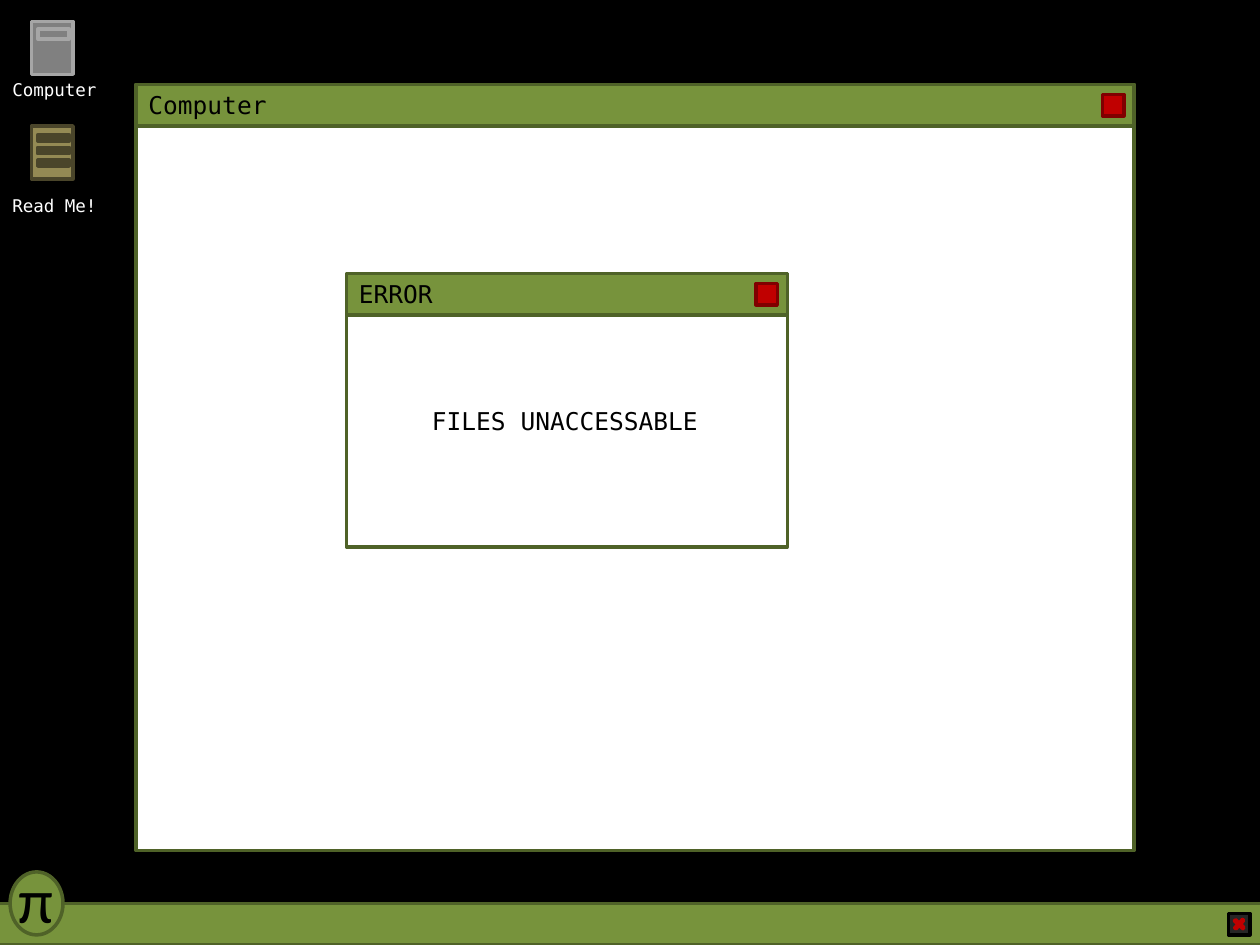
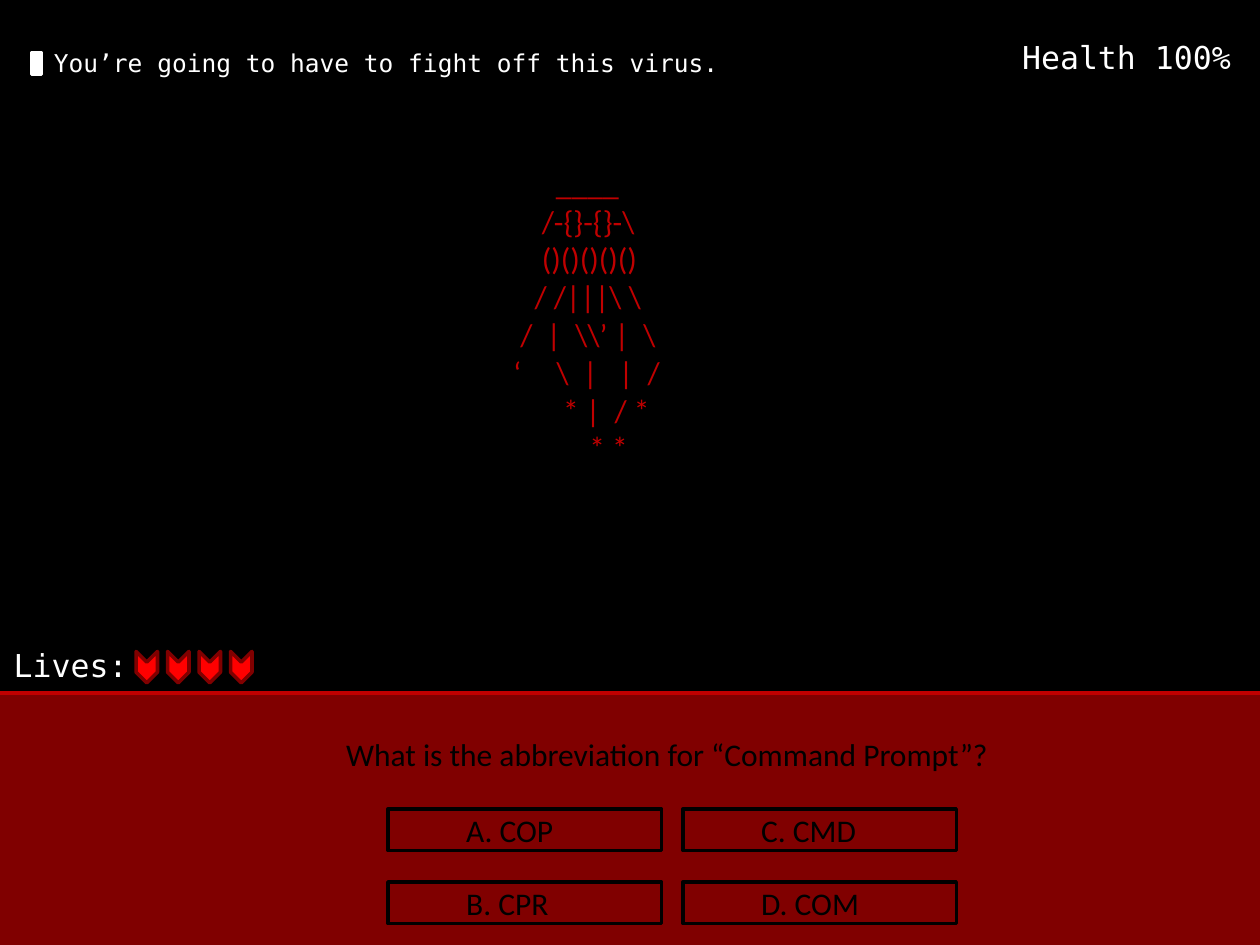
from pptx import Presentation
from pptx.dml.color import RGBColor
from pptx.enum.shapes import MSO_SHAPE
from pptx.enum.text import MSO_ANCHOR, PP_ALIGN
from pptx.util import Inches, Pt

COLORS = {
    "black": "000000", "white": "FFFFFF",
    "green": "77933C", "dark_green": "4F6228",
    "red": "C00000", "dark_red": "800000", "bright_red": "FF0000",
    "charcoal": "262626", "gray": "808080", "light_gray": "A6A6A6",
    "tan": "948A54", "brown": "4A452A",
}
MONO, SANS = "DejaVu Sans Mono", "Calibri"
BAR_HEIGHT = 0.33
BUTTON = 0.17
SPACE_WIDTH = 0.0565  # one Calibri space at 18 pt, in inches

# Each row: leading spaces, characters
VIRUS_ROWS = [
    (13, "____"),
    (11, "/-{}-{}-\\"),
    (11, "()()()()()"),
    (10, "/ /|||\\ \\"),
    (8, "/  |  \\\\’ |  \\"),
    (7, "‘     \\  |   |  /"),
    (14, "* |  / *"),
    (17.7, "* *"),
]
ANSWERS = [["A. COP", "C. CMD"], ["B. CPR", "D. COM"]]


def color(name):
    return RGBColor.from_string(COLORS[name])


def write(shape, text, size=14, font=MONO, ink="black", align=PP_ALIGN.LEFT,
          anchor=MSO_ANCHOR.TOP, wrap=False, left=0.1, top=0.05, indents=()):
    """Fill a shape with one paragraph per line of text."""
    frame = shape.text_frame
    frame.word_wrap = wrap
    frame.vertical_anchor = anchor
    frame.margin_left, frame.margin_top = Inches(left), Inches(top)
    for number, line in enumerate(text.split("\n")):
        paragraph = frame.paragraphs[0] if number == 0 else frame.add_paragraph()
        paragraph.alignment = align
        if indents:
            properties = paragraph._p.get_or_add_pPr()
            properties.set("marL", str(Inches(indents[number])))
            properties.set("indent", "0")
        run = paragraph.add_run()
        run.text = line
        run.font.size = Pt(size)
        run.font.name = font
        run.font.color.rgb = color(ink)


def add_text(slide, box, text, **style):
    write(slide.shapes.add_textbox(*map(Inches, box)), text, **style)


def add_block(slide, box, fill, line, kind=MSO_SHAPE.RECTANGLE, weight=2, rotation=0):
    block = slide.shapes.add_shape(kind, *map(Inches, box))
    block.shadow.inherit = False
    if fill:
        block.fill.solid()
        block.fill.fore_color.rgb = color(fill)
    else:
        block.fill.background()
    block.line.color.rgb = color(line)
    block.line.width = Pt(weight)
    block.rotation = rotation
    return block


def add_label(slide, box, text, **style):
    """Black strip with white text."""
    strip = add_block(slide, box, "black", "black", weight=0.75)
    write(strip, text, ink="white", **style)


def add_window(slide, box, title):
    left, top, width, _ = box
    add_block(slide, box, "white", "dark_green")
    bar = add_block(slide, (left, top, width, BAR_HEIGHT), "green", "dark_green")
    write(bar, title, anchor=MSO_ANCHOR.MIDDLE)
    close_box = (left + width - 0.25, top + 0.08, BUTTON, BUTTON)
    add_block(slide, close_box, "red", "dark_red")


def add_taskbar(slide, top):
    add_block(slide, (-0.08, top, 10.17, 0.33), "green", "dark_green")
    add_block(slide, (0.08, top - 0.25, 0.42, 0.5), "green", "dark_green",
              kind=MSO_SHAPE.OVAL)
    add_text(slide, (0.05, top - 0.39, 0.42, 0.71), "π", size=36, font=SANS)
    add_block(slide, (9.75, top + 0.08, BUTTON, BUTTON), "charcoal", "black")
    cross = add_block(slide, (9.79, top + 0.12, 0.09, 0.09), "red", "red",
                      kind=MSO_SHAPE.CROSS, rotation=42.8)
    cross.adjustments[0] = 0.429


def add_desktop_icon(slide, top, caption, caption_top, fill, line, detail_fill, details):
    """Icon body with inner bars, each given as (offset from top, height)."""
    add_label(slide, (0, caption_top, 0.88, 0.27), caption, size=10)
    add_block(slide, (0.25, top, 0.33, 0.42), fill, line)
    for offset, height in details:
        add_block(slide, (0.3, top + offset, 0.25, height), detail_fill, line)


def add_virus(slide, box):
    add_text(slide, box, "\n".join(row for _, row in VIRUS_ROWS),
             size=18, font=SANS, ink="red", wrap=True,
             indents=[spaces * SPACE_WIDTH for spaces, _ in VIRUS_ROWS])


def add_prompt(slide, left, top):
    """Terminal cursor followed by its message."""
    add_label(slide, (left + 0.08, top, 5.69, 0.34),
              "You’re going to have to fight off this virus.")
    add_block(slide, (left, top + 0.09, 0.08, 0.17), "white", "white")


def add_question(slide, box):
    left, top, _, _ = box
    panel = add_block(slide, box, "dark_red", "red")
    write(panel, "What is the abbreviation for “Command Prompt”?", size=18,
          font=SANS, align=PP_ALIGN.CENTER, wrap=True, left=0.2, top=0.33)
    for row, answers in enumerate(ANSWERS):
        for column, answer in enumerate(answers):
            answer_box = (left + 3.25 + column * 2.34, top + 0.92 + row * 0.58, 2.17, 0.33)
            button = add_block(slide, answer_box, None, "black")
            write(button, answer, size=18, font=SANS,
                  anchor=MSO_ANCHOR.MIDDLE, left=0.62)


def add_lives(slide, top, count):
    add_text(slide, (0, top, 1.12, 0.4), "Lives:", size=18, ink="white",
             align=PP_ALIGN.CENTER)
    for life in range(count):
        add_block(slide, (1.04 + life * 0.25, top + 0.13, 0.25, 0.17),
                  "bright_red", "dark_red", kind=MSO_SHAPE.CHEVRON, rotation=90)


def add_black_slide(deck):
    slide = deck.slides.add_slide(deck.slide_layouts[6])
    slide.background.fill.solid()
    slide.background.fill.fore_color.rgb = color("black")
    return slide


def build_desktop(deck):
    slide = add_black_slide(deck)
    add_taskbar(slide, 7.17)
    add_window(slide, (1.08, 0.67, 7.92, 6.08), "Computer")
    add_desktop_icon(slide, 0.17, "Computer", 0.58, "gray", "light_gray", "gray",
                     [(0.06, 0.08)])
    add_desktop_icon(slide, 1, "Read Me!", 1.5, "tan", "brown", "brown",
                     [(0.07 + 0.1 * bar, 0.05) for bar in range(3)])
    add_window(slide, (2.75, 2.17, 3.5, 2.17), "ERROR")
    add_text(slide, (3.33, 3.17, 2.35, 0.34), "FILES UNACCESSABLE")


def build_battle(deck):
    slide = add_black_slide(deck)
    add_question(slide, (-0.17, 5.5, 10.83, 2.17))
    add_virus(slide, (3.58, 1.25, 2, 2.52))
    add_prompt(slide, 0.25, 0.33)
    add_text(slide, (8, 0.25, 1.88, 0.4), "Health 100%", size=18, ink="white",
             align=PP_ALIGN.CENTER)
    add_lives(slide, 5.08, 4)


def main():
    deck = Presentation()
    deck.slide_width, deck.slide_height = Inches(10), Inches(7.5)
    build_desktop(deck)
    build_battle(deck)
    deck.save("out.pptx")


if __name__ == "__main__":
    main()
